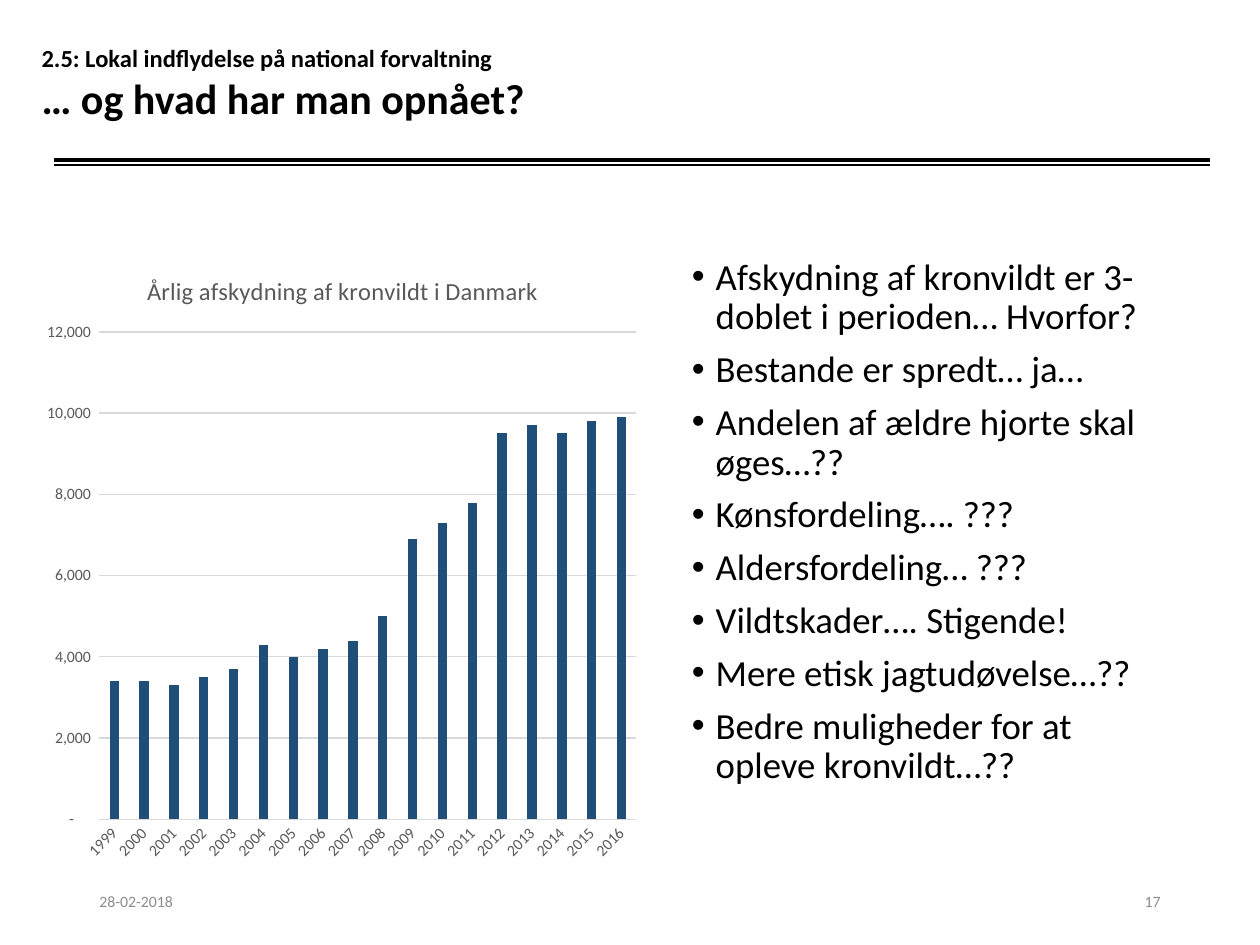
from lxml import etree
from pptx import Presentation
from pptx import util as u
from pptx.chart.data import CategoryChartData
from pptx.dml.color import RGBColor
from pptx.enum import chart as ch, shapes, text
from pptx.oxml import parse_xml
from pptx.oxml.ns import nsdecls, qn

FONT = "Calibri"
BLACK, GREY, PALE, LABEL, BAR = "000000", "8C8C8C", "D9D9D9", "595959", "1F4E79"

TITLE = [("2.5: Lokal indflydelse på national forvaltning", 14),
         ("… og hvad har man opnået?", 24)]
BULLETS = [
    "Afskydning af kronvildt er 3- doblet i perioden… Hvorfor?",
    "Bestande er spredt… ja…",
    "Andelen af ældre hjorte skal øges…??",
    "Kønsfordeling…. ???",
    "Aldersfordeling… ???",
    "Vildtskader…. Stigende!",
    "Mere etisk jagtudøvelse…??",
    "Bedre muligheder for at opleve kronvildt…??",
]
CHART_TITLE = "Årlig afskydning af kronvildt i Danmark"
FIRST_YEAR = 1999
HARVEST = [3400, 3400, 3300, 3500, 3700, 4300, 4000, 4200, 4400,
           5000, 6900, 7300, 7800, 9500, 9700, 9500, 9800, 9900]
NUMBER_FORMAT = '_ * #,##0_ ;_ * \\-#,##0_ ;_ * "-"??_ ;_ '
RULES = [(1.31, 1), (1.27, 2)]  # height on the slide, line width
FOOTER = [("28-02-2018", 0.69, text.PP_ALIGN.LEFT),
          ("17", 7.06, text.PP_ALIGN.RIGHT)]


def color(value):
    return RGBColor.from_string(value)


def style(font, size, value, bold=False):
    font.name, font.size, font.bold = FONT, u.Pt(size), bold
    font.color.rgb = color(value)


def place(shape, *box):
    shape.left, shape.top, shape.width, shape.height = map(u.Inches, box)


def add_rule(page, top, width):
    line = page.shapes.add_connector(
        shapes.MSO_CONNECTOR.STRAIGHT,
        *map(u.Inches, (0.43, top, 9.6, top)))
    line.line.color.rgb = color(BLACK)
    line.line.width = u.Pt(width)
    etree.SubElement(line._element.spPr, qn("a:effectLst"))


def fill_title(shape):
    place(shape, 0.23, 0.07, 9, 1.17)
    frame = shape.text_frame
    frame.auto_size = text.MSO_AUTO_SIZE.NONE
    frame.vertical_anchor = text.MSO_ANCHOR.MIDDLE
    frame.text = "\v".join(line for line, _ in TITLE)
    para = frame.paragraphs[0]
    para.alignment = text.PP_ALIGN.LEFT
    for span, (_, size) in zip(para.runs, TITLE):
        style(span.font, size, BLACK, bold=True)


def fill_bullets(shape):
    place(shape, 5.39, 2, 3.92, 4.76)
    frame = shape.text_frame
    frame.auto_size = text.MSO_AUTO_SIZE.NONE
    frame.text = "\n".join(BULLETS)
    for number, para in enumerate(frame.paragraphs):
        properties = para._p.get_or_add_pPr()
        properties.set("marL", str(u.Inches(0.19)))
        properties.set("indent", str(-u.Inches(0.19)))
        etree.SubElement(properties, qn("a:buFont"), typeface="Arial")
        etree.SubElement(properties, qn("a:buChar"), char="•")
        para.line_spacing = 0.9
        para.space_before = u.Pt(7.5 if number else 0)
        style(para.runs[0].font, 21, BLACK)


def add_footer(page, words, left, alignment):
    box = page.shapes.add_textbox(*map(u.Inches, (left, 6.95, 2.25, 0.4)))
    frame = box.text_frame
    frame.word_wrap = True
    frame.vertical_anchor = text.MSO_ANCHOR.MIDDLE
    frame.text = words
    para = frame.paragraphs[0]
    para.alignment = alignment
    style(para.runs[0].font, 9, GREY)


def chart_layout(target="", **shares):
    """Manual layout, in shares of the chart's size."""
    modes = '<c:xMode val="edge"/><c:yMode val="edge"/>'
    sizes = "".join(f'<c:{key} val="{share}"/>' for key, share in shares.items())
    return parse_xml(f'<c:layout {nsdecls("c")}><c:manualLayout>{target}{modes}'
                     f'{sizes}</c:manualLayout></c:layout>')


def set_layout(parent, layout, before):
    for old in parent.findall(qn("c:layout")):
        parent.remove(old)
    parent.find(qn(before)).addprevious(layout)


def add_harvest_chart(page):
    data = CategoryChartData()
    data.categories = [str(FIRST_YEAR + n) for n in range(len(HARVEST))]
    data.add_series("Series 1", HARVEST)
    chart = page.shapes.add_chart(
        ch.XL_CHART_TYPE.COLUMN_CLUSTERED,
        *map(u.Inches, (0.25, 1.94, 4.9, 4.96)), data).chart
    style(chart.font, 10, BLACK)
    chart.has_legend = False

    chart.has_title = True
    heading = chart.chart_title
    heading.text_frame.text = CHART_TITLE
    style(heading.text_frame.paragraphs[0].runs[0].font, 14, LABEL)
    set_layout(heading._element, chart_layout(x=0.18, y=0.04), "c:overlay")

    plot = chart.plots[0]
    plot.gap_width, plot.overlap, plot.vary_by_categories = 219, -27, False
    bars = plot.series[0].format.fill
    bars.solid()
    bars.fore_color.rgb = color(BAR)
    set_layout(chart._chartSpace.chart.plotArea,
               chart_layout('<c:layoutTarget val="inner"/>',
                            x=0.11, y=0.14, w=0.87, h=0.78), "c:barChart")

    years, counts = chart.category_axis, chart.value_axis
    for axis in (years, counts):
        axis.major_tick_mark = axis.minor_tick_mark = ch.XL_TICK_MARK.NONE
        style(axis.tick_labels.font, 9, LABEL)
    counts.minimum_scale, counts.maximum_scale, counts.major_unit = 0, 12000, 2000
    counts.tick_labels.number_format = NUMBER_FORMAT
    counts.tick_labels.number_format_is_linked = False
    counts.format.line.fill.background()
    for line in (years.format.line, counts.major_gridlines.format.line):
        line.color.rgb = color(PALE)
        line.width = u.Pt(0.75)
    label_body = years._element.find(qn("c:txPr")).find(qn("a:bodyPr"))
    label_body.set("rot", str(-45 * 60000))


def main():
    deck = Presentation()
    deck.slide_width, deck.slide_height = u.Inches(10), u.Inches(7.5)
    page = deck.slides.add_slide(deck.slide_layouts[1])
    for rule in RULES:
        add_rule(page, *rule)
    fill_title(page.shapes.title)
    fill_bullets(page.placeholders[1])
    for entry in FOOTER:
        add_footer(page, *entry)
    add_harvest_chart(page)
    deck.save("out.pptx")


if __name__ == "__main__":
    main()
